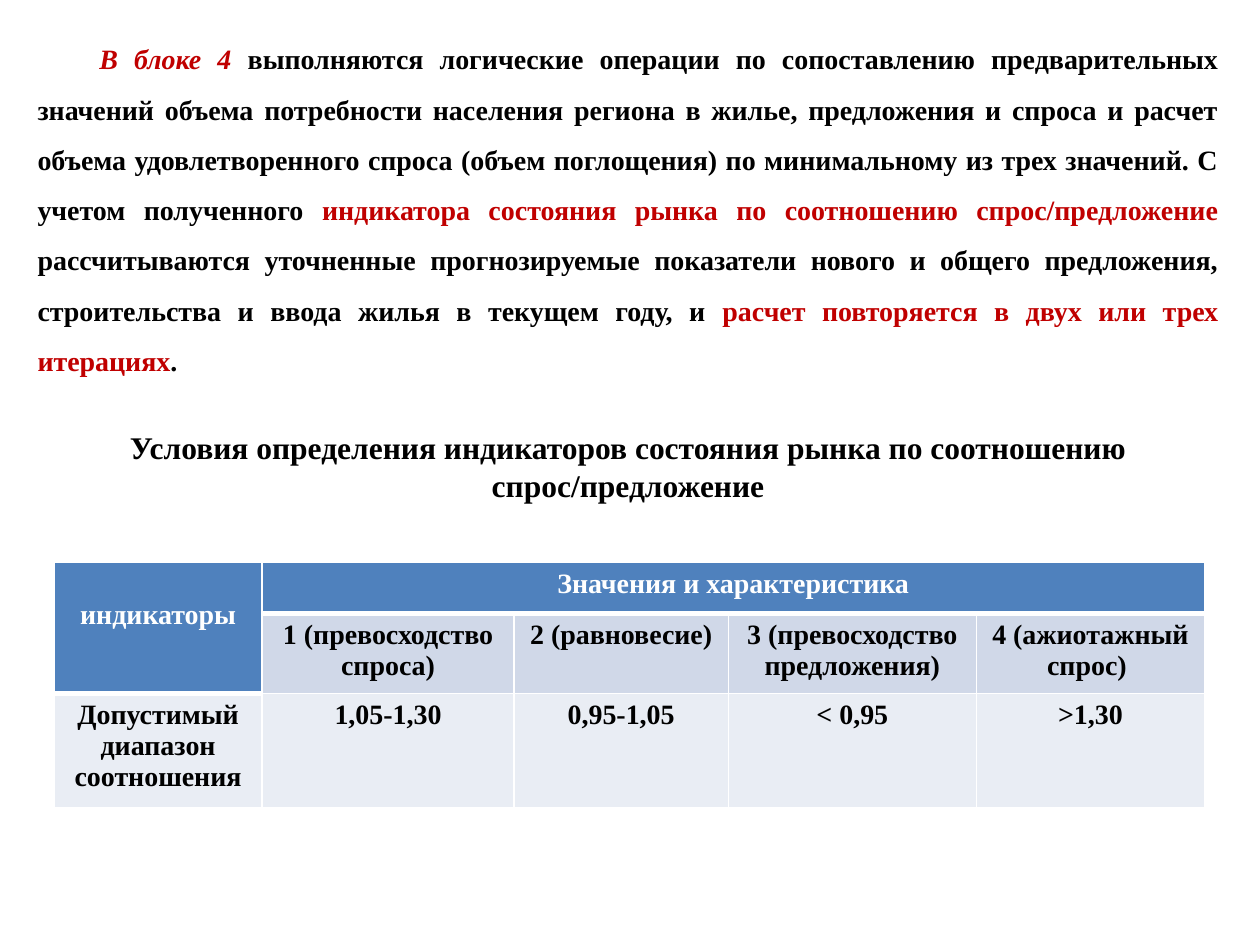
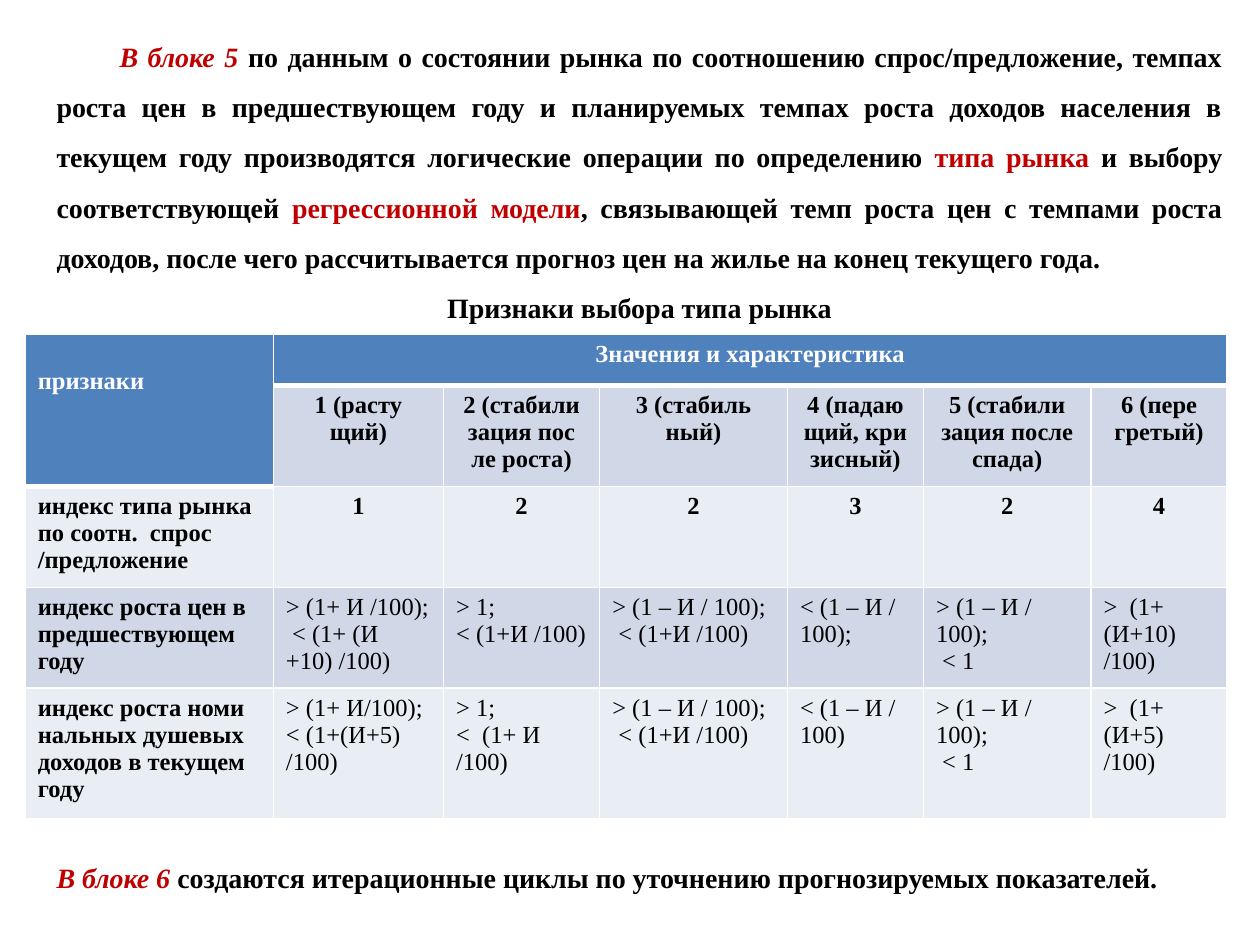
from lxml.etree import SubElement
from pptx import Presentation
from pptx.dml.color import RGBColor
from pptx.enum.text import PP_ALIGN
from pptx.oxml.ns import qn
from pptx.util import Inches, Pt

COLORS = {
    "text": "000000",
    "accent": "C00000",
    "header": "4F81BD",
    "white": "FFFFFF",
    "band": "D0D8E8",
    "light": "E9EDF4",
}
FONT = "Times New Roman"
WIDTH, HEIGHT = Inches(10), Inches(7.5)
COLUMN, ROW = WIDTH / 100, HEIGHT / 75
BODY_LEADING, HEADING_LEADING = 28.75, 21.7
THIN, THICK = 1, 3

DEMAND_INTRO = [
    ("В блоке 4 ", "lead"),
    ("выполняются логические операции по сопоставлению предварительных значений "
     "объема потребности населения региона в жилье, предложения и спроса и расчет "
     "объема удовлетворенного спроса (объем поглощения) по минимальному из трех "
     "значений. С учетом полученного ", "plain"),
    ("индикатора состояния рынка по соотношению спрос/предложение ", "accent"),
    ("рассчитываются уточненные прогнозируемые показатели нового и общего "
     "предложения, строительства и ввода жилья в текущем году, и ", "plain"),
    ("расчет повторяется в двух или трех итерациях", "accent"),
    (".", "plain"),
]
DEMAND_HEADING = ("Условия определения индикаторов состояния рынка "
                  "по соотношению спрос/предложение")
DEMAND_ROWS = [
    ["индикаторы", "Значения и характеристика", "", "", ""],
    ["", "1 (превосходство спроса)", "2 (равновесие)",
     "3 (превосходство предложения)", "4 (ажиотажный спрос) "],
    ["Допустимый диапазон соотношения", "1,05-1,30", "0,95-1,05", "< 0,95", ">1,30"],
]

MARKET_INTRO = [
    ("В блоке 5 ", "lead"),
    ("по данным о состоянии рынка по соотношению спрос/предложение, темпах роста "
     "цен в предшествующем году и планируемых темпах роста доходов населения в "
     "текущем году производятся логические операции по определению ", "plain"),
    ("типа рынка ", "accent"),
    ("и выбору соответствующей ", "plain"),
    ("регрессионной модели", "accent"),
    (", связывающей темп роста цен с темпами роста доходов, после чего "
     "рассчитывается прогноз цен на жилье на конец текущего года.", "plain"),
]
MARKET_HEADING = "Признаки выбора типа рынка"
MARKET_ROWS = [
    ["признаки", "Значения и характеристика", "", "", "", "", ""],
    ["", "1 (расту щий)", "2 (стабили зация пос ле роста)", "3 (стабиль ный)",
     "4 (падаю щий, кри зисный)", "5 (стабили зация после спада)",
     "6 (пере гретый)"],
    ["индекс типа рынка по соотн.  спрос /предложение", "1", "2", "2", "3", "2", "4"],
    ["индекс роста цен в предшествующем году",
     "> (1+ И /100);\n < (1+ (И +10) /100)", "> 1;\n< (1+И /100)",
     "> (1 – И / 100);\n < (1+И /100)", "< (1 – И / 100);",
     "> (1 – И / 100);\n < 1", ">  (1+ (И+10) /100)"],
    ["индекс роста номи нальных душевых доходов в текущем году",
     "> (1+ И/100);\n< (1+(И+5) /100)", "> 1;\n<  (1+ И /100)",
     "> (1 – И / 100);\n < (1+И /100)", "< (1 – И / 100)",
     "> (1 – И / 100);\n < 1", ">  (1+ (И+5) /100)"],
]
CYCLES_NOTE = [
    ("В блоке 6 ", "lead"),
    ("создаются итерационные циклы по уточнению прогнозируемых показателей.", "plain"),
]


def rgb(name):
    return RGBColor.from_string(COLORS[name])


def write(paragraph, content, size=16, color="text", bold=True,
          align=PP_ALIGN.LEFT, leading=None, indent=0):
    """Fill a paragraph with a string or with (text, style) segments."""
    paragraph.alignment = align
    if leading:
        paragraph.line_spacing = Pt(leading)
    if indent:
        properties = paragraph._p.get_or_add_pPr()
        properties.set("marL", "0")
        properties.set("indent", str(Inches(indent)))
    segments = [(content, "plain")] if isinstance(content, str) else content
    for words, style in segments:
        run = paragraph.add_run()
        run.text = words
        run.font.name = FONT
        run.font.size = Pt(size)
        run.font.bold = bold
        run.font.italic = style == "lead"
        run.font.color.rgb = rgb(color if style == "plain" else "accent")


def place(box):
    """Turn (left, top, width, height) in grid units into slide lengths."""
    left, top, width, height = box
    return [round(n) for n in (left * COLUMN, top * ROW, width * COLUMN, height * ROW)]


def add_text(slide, box, *paragraphs):
    """Add a text box; each paragraph is (content, format options)."""
    frame = slide.shapes.add_textbox(*place(box)).text_frame
    frame.word_wrap = True
    for number, (content, options) in enumerate(paragraphs):
        paragraph = frame.add_paragraph() if number else frame.paragraphs[0]
        write(paragraph, content, **options)


def set_borders(cell, top, bottom):
    properties = cell._tc.get_or_add_tcPr()
    for side, points in (("L", THIN), ("R", THIN), ("T", top), ("B", bottom)):
        line = SubElement(properties, qn(f"a:ln{side}"), w=str(Pt(points)))
        fill = SubElement(line, qn("a:solidFill"))
        SubElement(fill, qn("a:srgbClr"), val=COLORS["white"])


def is_header(row, column):
    return row == 0 or (row == 1 and column == 0)


def add_market_table(slide, box, rows, widths, heights, size, label_align):
    """Add a table whose first cell spans two rows and whose title spans the rest."""
    table = slide.shapes.add_table(len(rows), len(widths), *place(box)).table
    for column, width in zip(table.columns, widths):
        column.width = round(width * COLUMN)
    for row, height in zip(table.rows, heights):
        row.height = round(height * ROW)
    table.cell(0, 0).merge(table.cell(1, 0))
    table.cell(0, 1).merge(table.cell(0, len(widths) - 1))

    for r, values in enumerate(rows):
        for c, value in enumerate(values):
            cell = table.cell(r, c)
            header = is_header(r, c)
            below_header = r > 0 and not header and is_header(r - 1, c)
            set_borders(cell, THICK if below_header else THIN,
                        THICK if header else THIN)
            cell.fill.solid()
            cell.fill.fore_color.rgb = rgb(
                "header" if header else "band" if r % 2 else "light")
            if not value:
                continue
            formula = r > 2 and c > 0
            align = (label_align if c == 0
                     else PP_ALIGN.LEFT if formula else PP_ALIGN.CENTER)
            for number, line in enumerate(value.split("\n")):
                frame = cell.text_frame
                paragraph = frame.add_paragraph() if number else frame.paragraphs[0]
                write(paragraph, line, size=size, bold=not formula, align=align,
                      color="white" if header else "text")
    # The corner label starts one text line lower
    table.cell(0, 0).margin_top = Inches(0.05) + Pt(size * 1.11)


def build_demand_slide(slide):
    add_text(slide, (2, 1.5, 95.7, 30),
             (DEMAND_INTRO, dict(align=PP_ALIGN.JUSTIFY, leading=BODY_LEADING,
                                 indent=0.49)))
    add_text(slide, (2, 33.5, 95.7, 7),
             (DEMAND_HEADING, dict(size=18, align=PP_ALIGN.CENTER,
                                   leading=HEADING_LEADING)))
    add_market_table(slide, (4.3, 44.6, 91.3, 19.4), DEMAND_ROWS,
                     widths=(16.5, 20, 17, 19.7, 18.1), heights=(4.1, 6.2, 9.1),
                     size=16, label_align=PP_ALIGN.CENTER)


def build_market_slide(slide):
    add_text(slide, (3.5, 1.3, 94.5, 25),
             (MARKET_INTRO, dict(align=PP_ALIGN.JUSTIFY, leading=BODY_LEADING,
                                 indent=0.5)),
             (MARKET_HEADING, dict(align=PP_ALIGN.CENTER, leading=BODY_LEADING)))
    add_market_table(slide, (2, 26.5, 95.3, 38.4), MARKET_ROWS,
                     widths=(19.7, 13.5, 12.4, 14.9, 10.8, 13.3, 10.8),
                     heights=(4.1, 8, 8, 8, 10.3),
                     size=14, label_align=PP_ALIGN.LEFT)
    add_text(slide, (3.5, 66.5, 94.5, 5), (CYCLES_NOTE, dict(leading=BODY_LEADING)))


def main():
    deck = Presentation()
    deck.slide_width, deck.slide_height = WIDTH, HEIGHT
    blank = deck.slide_layouts[6]
    for build in (build_demand_slide, build_market_slide):
        build(deck.slides.add_slide(blank))
    deck.save("out.pptx")


if __name__ == "__main__":
    main()
